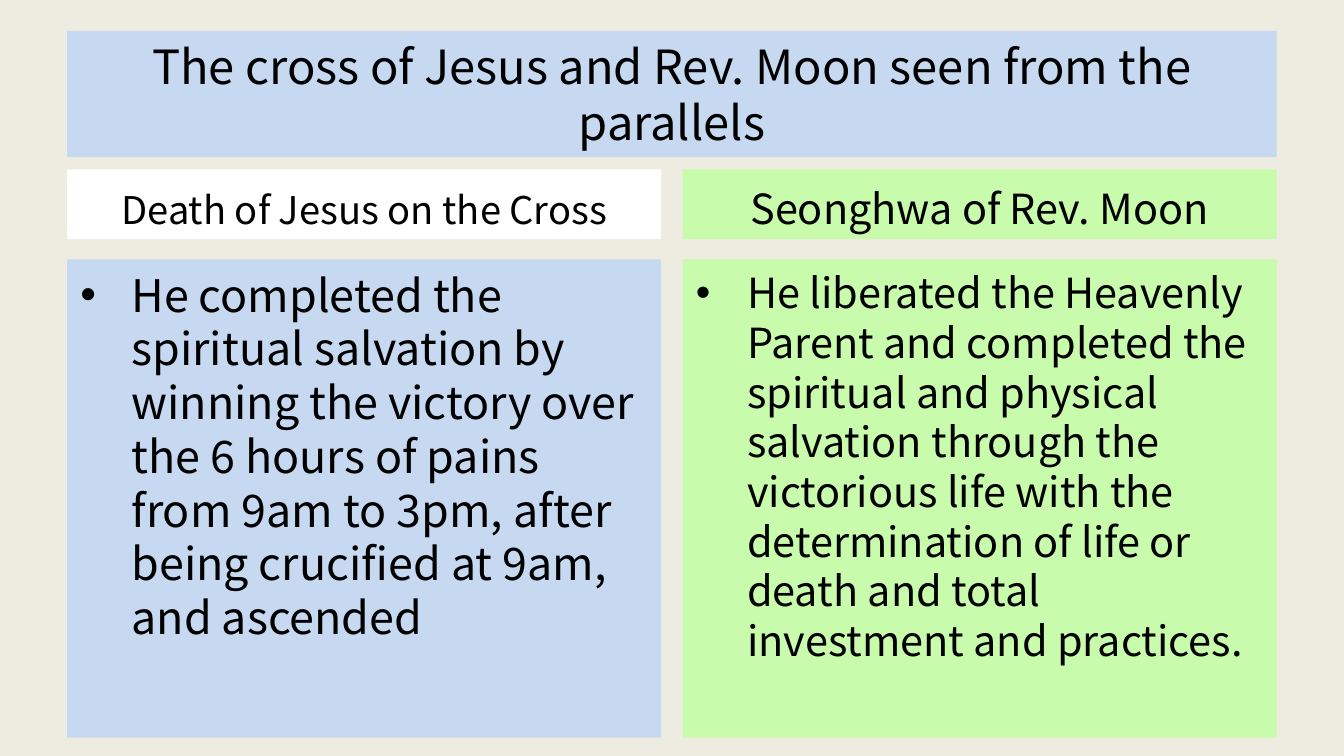
from pptx import Presentation
from pptx.dml.color import RGBColor
from pptx.enum.shapes import MSO_SHAPE
from pptx.enum.text import MSO_ANCHOR, PP_ALIGN
from pptx.oxml.ns import qn
from pptx.util import Inches, Pt
from lxml.etree import SubElement

FONT = "Noto Sans CJK KR"
BLUE, GREEN, WHITE = "C6D9F1", "C8FBAB", "FFFFFF"
LEFT, COLUMN_WIDTH, COLUMN_STEP = 0.5, 4.42, 4.58
LINE_RATIO = 1.2
TITLE = {"vertical_anchor": MSO_ANCHOR.MIDDLE, "margin_top": Inches(0.04)}
HEADING = {"vertical_anchor": MSO_ANCHOR.BOTTOM}
BODY = {"vertical_anchor": MSO_ANCHOR.TOP}
COLUMNS = [
    ("Death of Jesus on the Cross", 20.4, WHITE,
     "He completed the spiritual salvation by winning the victory over the 6 hours "
     "of pains from 9am to 3pm, after being crucified at 9am, and ascended", 24, BLUE),
    ("Seonghwa of Rev. Moon", 22.2, GREEN,
     "He liberated the Heavenly Parent and completed the spiritual and physical "
     "salvation through the victorious life with the determination of life or death "
     "and total investment and practices.", 22.2, GREEN),
]


def color(value):
    """Return the colour for a hex string."""
    return RGBColor.from_string(value)


def apply(target, values):
    """Set every attribute of a format dict on the target."""
    for name, value in values.items():
        setattr(target, name, value)


def add_bullet(paragraph):
    """Give a paragraph a hanging bullet."""
    properties = paragraph._p.get_or_add_pPr()
    properties.set("marL", str(Inches(0.38)))
    properties.set("indent", str(-Inches(0.38)))
    SubElement(properties, qn("a:buFont"), typeface="Arial")
    SubElement(properties, qn("a:buChar"), char="•")


def add_panel(slide, box, text, size, fill, frame_format, align, bullet=False):
    """Draw a filled rectangle holding one paragraph."""
    panel = slide.shapes.add_shape(MSO_SHAPE.RECTANGLE, *map(Inches, box))
    panel.shadow.inherit = False
    panel.fill.solid()
    panel.fill.fore_color.rgb = color(fill)
    panel.line.fill.background()
    frame = panel.text_frame
    apply(frame, {"word_wrap": True, "margin_top": Inches(0.06),
                  "margin_bottom": Inches(0.05), **frame_format})
    paragraph = frame.paragraphs[0]
    apply(paragraph, {"alignment": align, "line_spacing": Pt(size * LINE_RATIO)})
    if bullet:
        add_bullet(paragraph)
    run = paragraph.add_run()
    run.text = text
    apply(run.font, {"name": FONT, "size": Pt(size)})
    run.font.color.rgb = color("000000")


def add_title(slide, box):
    """Place the title banner in its box."""
    add_panel(slide, box, "The cross of Jesus and Rev. Moon seen from the parallels",
              25.2, BLUE, TITLE, PP_ALIGN.CENTER)


def add_column(slide, box, heading, heading_size, heading_fill, body, body_size, body_fill):
    """Place a heading above its bulleted body in the given box."""
    left, top, width, height = box
    heading_height, body_offset = 0.52, 0.67
    add_panel(slide, (left, top, width, heading_height), heading, heading_size,
              heading_fill, HEADING, PP_ALIGN.CENTER)
    add_panel(slide, (left, top + body_offset, width, height - body_offset), body,
              body_size, body_fill, BODY, PP_ALIGN.LEFT, bullet=True)


def main():
    """Build and save the comparison slide."""
    deck = Presentation()
    apply(deck, {"slide_width": Inches(10), "slide_height": Inches(10) * 9 // 16})
    slide = deck.slides.add_slide(deck.slide_layouts[6])
    slide.background.fill.solid()
    slide.background.fill.fore_color.rgb = color("EEECE1")
    add_title(slide, (LEFT, 0.23, 9, 0.94))
    for index, column in enumerate(COLUMNS):
        add_column(slide, (LEFT + index * COLUMN_STEP, 1.26, COLUMN_WIDTH, 4.23), *column)
    deck.save("out.pptx")


if __name__ == "__main__":
    main()
